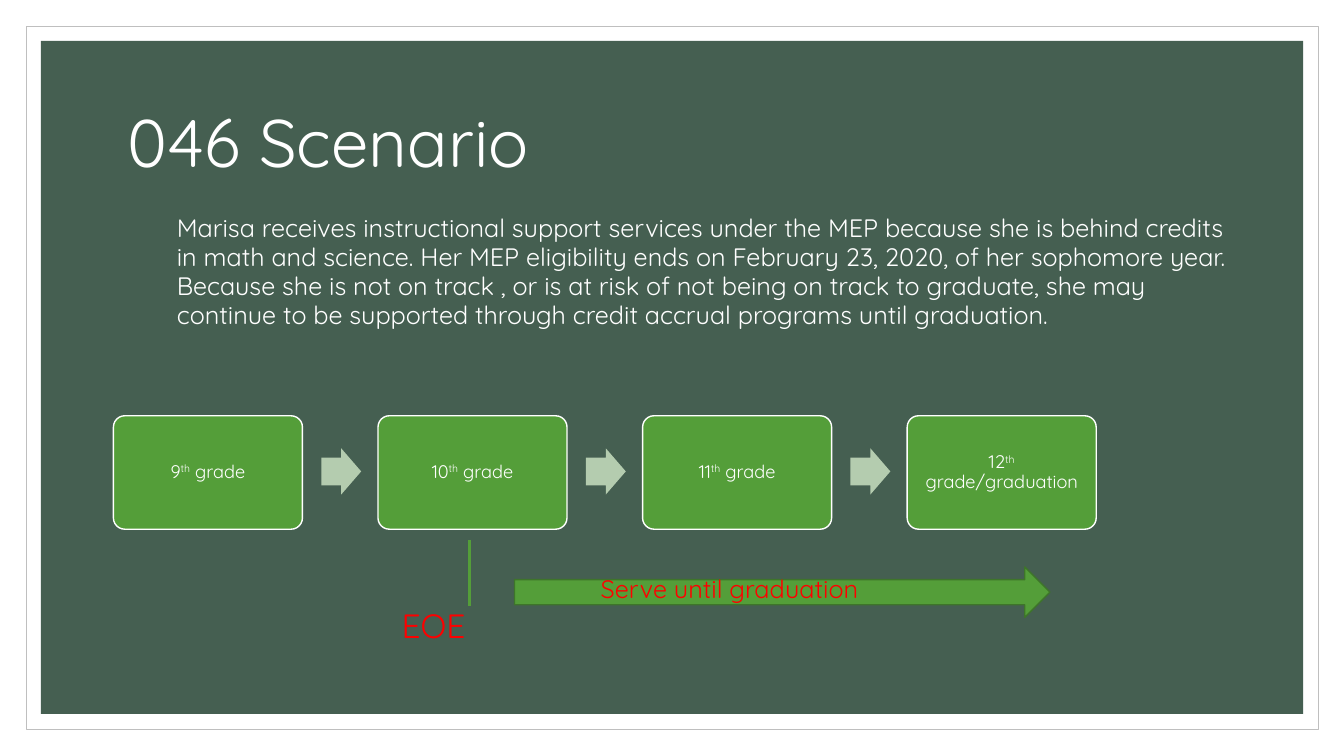
from pptx import Presentation
from pptx.dml.color import RGBColor as RGB
from pptx.enum.shapes import MSO_CONNECTOR as CONN, MSO_SHAPE as SHAPE
from pptx.enum.text import MSO_ANCHOR as ANCHOR, MSO_AUTO_SIZE as FIT, PP_ALIGN as ALIGN
from pptx.oxml.ns import qn
from pptx.util import Pt
from lxml.etree import SubElement

PX = 9525
FONT = "Quicksand"
COLORS = {
    "white": "FFFFFF",
    "frame": "BFBFBF",
    "panel": "455F51",
    "green": "549E39",
    "edge": "3E752A",
    "pale": "B4CCAF",
    "red": "FF0000",
}
STORY = (
    "Marisa receives instructional support services under the MEP because she is "
    "behind credits in math and science. Her MEP eligibility ends on February 23, "
    "2020, of her sophomore year. Because she is not on track , or is at risk of not "
    "being on track to graduate, she may continue to be supported through credit "
    "accrual programs until graduation."
)
GRADES = [("9", " grade"), ("10", " grade"), ("11", " grade"), ("12", " grade/graduation")]
LEFT, TOP, STEP = 108, 396, 252


def color(name):
    """Return the named colour."""
    return RGB.from_string(COLORS[name])


def scale(*sizes):
    """Turn pixel lengths into EMU."""
    return [size * PX for size in sizes]


def style(para, size, ink, space=0.9):
    """Format a paragraph and all its runs."""
    para.line_spacing = space
    for run in para.runs:
        run.font.name = FONT
        run.font.size = Pt(size)
        run.font.color.rgb = color(ink)


def add_shape(slide, kind, box, fill, line=None, width=1, adjust=()):
    """Add a flat preset shape."""
    shape = slide.shapes.add_shape(kind, *scale(*box))
    shape.shadow.inherit = False
    shape.fill.solid()
    shape.fill.fore_color.rgb = color(fill)
    if line:
        shape.line.color.rgb = color(line)
        shape.line.width = Pt(width)
    else:
        shape.line.fill.background()
    for index, value in enumerate(adjust):
        shape.adjustments[index] = value
    return shape


def add_text(slide, box, text, size, ink="white", space=0.9, align=ALIGN.LEFT,
             anchor=ANCHOR.TOP, fit=FIT.NONE):
    """Add a wrapped text box."""
    frame = slide.shapes.add_textbox(*scale(*box)).text_frame
    frame.word_wrap = True
    frame.auto_size = fit
    frame.vertical_anchor = anchor
    frame.text = text
    para = frame.paragraphs[0]
    para.alignment = align
    style(para, size, ink, space)


def add_grade(slide, left, number, label):
    """Add one grade box with a raised ordinal."""
    card = add_shape(slide, SHAPE.ROUNDED_RECTANGLE, (left, TOP, 180, 108),
                     "green", "white", adjust=[0.1])
    frame = card.text_frame
    frame.word_wrap = True
    frame.vertical_anchor = ANCHOR.MIDDLE
    frame.margin_left = frame.margin_right = 8 * PX
    frame.margin_top = frame.margin_bottom = 8 * PX
    para = frame.paragraphs[0]
    para.alignment = ALIGN.CENTER
    for part in (number, "th", label):
        para.add_run().text = part
    style(para, 13, "white")
    para.runs[1]._r.get_or_add_rPr().set("baseline", "30000")


def add_line(slide, ends, ink, width):
    """Add a straight line without a shadow."""
    line = slide.shapes.add_connector(CONN.STRAIGHT, *scale(*ends))
    line.line.color.rgb = color(ink)
    line.line.width = Pt(width)
    SubElement(line._element.spPr, qn("a:effectLst"))


def add_flow(slide):
    """Add the grade boxes and the arrows between them."""
    for index, (number, label) in enumerate(GRADES):
        left = LEFT + index * STEP
        if index:
            add_shape(slide, SHAPE.RIGHT_ARROW, (left - 54, 427, 38, 44),
                      "pale", adjust=[0.6, 0.5])
        add_grade(slide, left, number, label)


def main():
    """Build and save the slide."""
    deck = Presentation()
    deck.slide_width, deck.slide_height = scale(1280, 720)
    slide = deck.slides.add_slide(deck.slide_layouts[6])
    add_shape(slide, SHAPE.RECTANGLE, (25, 25, 1231, 670), "white", "frame", 0.5)
    add_shape(slide, SHAPE.RECTANGLE, (39, 39, 1202, 641), "panel")
    add_text(slide, (112, 67, 1056, 144), "046 Scenario", 48, anchor=ANCHOR.MIDDLE)
    add_text(slide, (159, 200, 1024, 216), STORY, 18, space=0.95)
    add_flow(slide)
    add_shape(slide, SHAPE.RIGHT_ARROW, (490, 540, 510, 48), "green", "edge")
    add_line(slide, (447, 514, 447, 577), "green", 2)
    add_text(slide, (373, 576, 117, 44), "EOE", 24, "red", fit=FIT.SHAPE_TO_FIT_TEXT)
    add_text(slide, (514, 545, 368, 35), "Serve until graduation ", 18, "red",
             align=ALIGN.CENTER, fit=FIT.SHAPE_TO_FIT_TEXT)
    deck.save("out.pptx")


if __name__ == "__main__":
    main()
